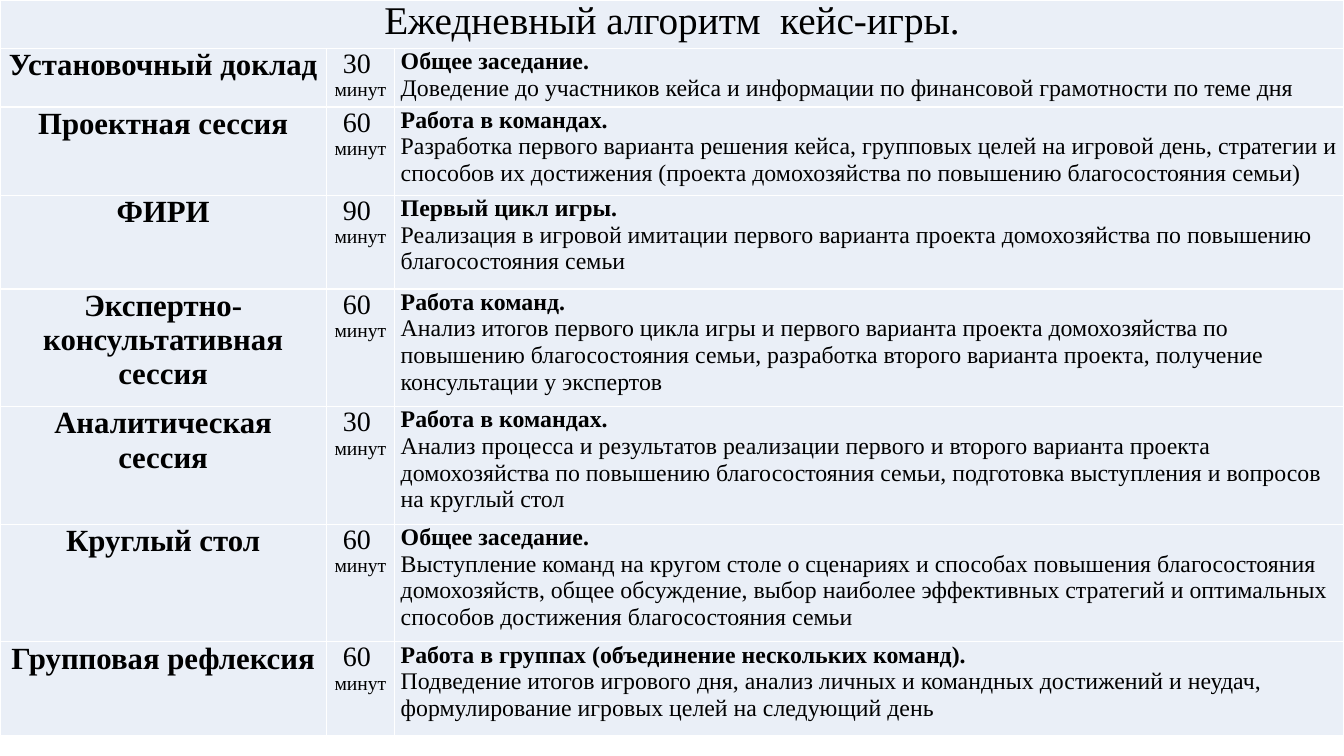
from pptx import Presentation
from pptx.dml.color import RGBColor
from pptx.enum.text import PP_ALIGN
from pptx.oxml import parse_xml
from pptx.oxml.ns import nsdecls
from pptx.util import Pt

LEFT, MID = PP_ALIGN.LEFT, PP_ALIGN.CENTER

HEAD = "Ежедневный алгоритм  кейс-игры."
UNIT = "минут"
# stage, minutes, form of work, content, row height
STAGES = [
    ("Установочный доклад", 30, "Общее заседание.",
     "Доведение до участников кейса и информации по финансовой грамотности "
     "по теме дня", 42),
    ("Проектная сессия", 60, "Работа в командах.",
     "Разработка первого варианта решения кейса, групповых целей на игровой "
     "день, стратегии и способов их достижения (проекта домохозяйства по "
     "повышению благосостояния семьи)", 63),
    ("ФИРИ", 90, "Первый цикл игры.",
     "Реализация в игровой имитации первого варианта проекта домохозяйства "
     "по повышению благосостояния семьи", 67),
    ("Экспертно-консультативная сессия", 60, "Работа команд.",
     "Анализ итогов первого цикла игры и первого варианта проекта "
     "домохозяйства по повышению благосостояния семьи, разработка второго "
     "варианта проекта, получение консультации у экспертов", 84),
    ("Аналитическая сессия", 30, "Работа в командах.",
     "Анализ процесса и результатов реализации первого и второго варианта "
     "проекта домохозяйства по повышению благосостояния семьи, подготовка "
     "выступления и вопросов на круглый стол", 84),
    ("Круглый стол", 60, "Общее заседание.",
     "Выступление команд на кругом столе о сценариях и способах повышения "
     "благосостояния домохозяйств, общее обсуждение, выбор наиболее "
     "эффективных стратегий и оптимальных способов достижения "
     "благосостояния семьи", 84),
    ("Групповая рефлексия", 60,
     "Работа в группах (объединение нескольких команд).",
     "Подведение итогов игрового дня, анализ личных и командных достижений "
     "и неудач, формулирование игровых целей на следующий день", 67),
]

WIDE, HIGH = 960, 540
COLS = [233, 49, 678]
HEAD_H = 34.5
INSETS = {"margin_left": Pt(4.3), "margin_right": Pt(4.3),
          "margin_top": 0, "margin_bottom": 0}
THEME = {
    "font": "Times New Roman",
    "ink": RGBColor(0, 0, 0),
    "fill": RGBColor(0xEA, 0xEF, 0xF7),
    "line": "FFFFFF",
    # size, bold
    "head": (28, False),
    "stage": (22, True),
    "count": (20, False),
    "unit": (14, False),
    "form": (17, True),
    "body": (17, False),
}


def set_all(item, values):
    for name, value in values.items():
        setattr(item, name, value)


def style(cell):
    set_all(cell, INSETS)
    props = cell._tc.get_or_add_tcPr()
    # Borders must come before the fill in the cell properties.
    for side in "LRTB":
        props.append(parse_xml(
            f'<a:ln{side} {nsdecls("a")} w="{Pt(1)}"><a:solidFill>'
            f'<a:srgbClr val="{THEME["line"]}"/></a:solidFill></a:ln{side}>'))
    cell.fill.solid()
    cell.fill.fore_color.rgb = THEME["fill"]


def write(cell, align, *lines):
    """Fill a cell with (text, theme role) pairs, one paragraph each."""
    frame = cell.text_frame
    for i, (text, role) in enumerate(lines):
        para = frame.add_paragraph() if i else frame.paragraphs[0]
        para.alignment = align
        run = para.add_run()
        run.text = text
        size, bold = THEME[role]
        set_all(run.font, {"name": THEME["font"], "size": Pt(size),
                           "bold": bold})
        run.font.color.rgb = THEME["ink"]


def main():
    deck = Presentation()
    set_all(deck, {"slide_width": Pt(WIDE), "slide_height": Pt(HIGH)})
    slide = deck.slides.add_slide(deck.slide_layouts[6])

    rows = [HEAD_H] + [stage[-1] for stage in STAGES]
    table = slide.shapes.add_table(len(rows), len(COLS), 0, 0,
                                   Pt(WIDE), Pt(sum(rows))).table
    for col, width in zip(table.columns, COLS):
        col.width = Pt(width)
    for row, height in zip(table.rows, rows):
        row.height = Pt(height)
    for cell in table.iter_cells():
        style(cell)

    table.cell(0, 0).merge(table.cell(0, len(COLS) - 1))
    write(table.cell(0, 0), MID, (HEAD, "head"))
    for r, (name, count, form, body, _) in enumerate(STAGES, 1):
        write(table.cell(r, 0), MID, (name, "stage"))
        write(table.cell(r, 1), MID, (f"{count} ", "count"), (UNIT, "unit"))
        write(table.cell(r, 2), LEFT, (form, "form"), (body, "body"))

    deck.save("out.pptx")


if __name__ == "__main__":
    main()
